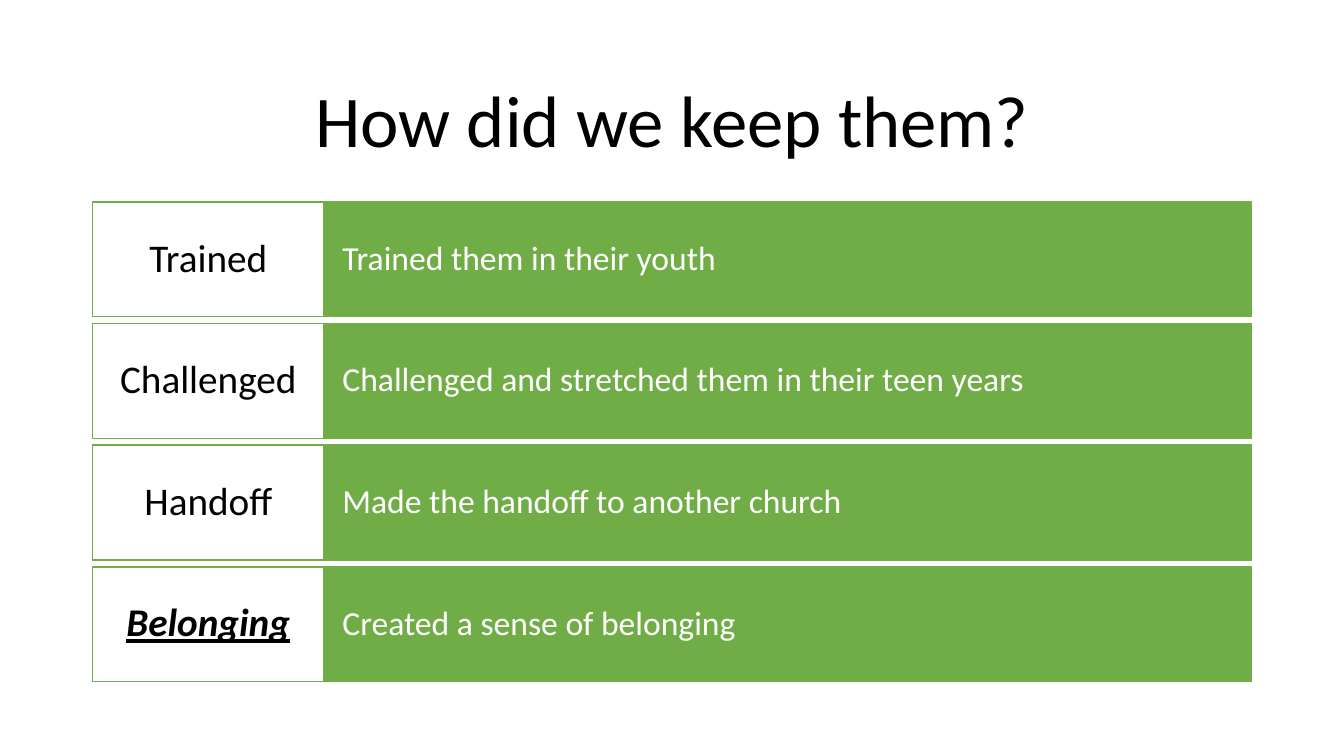
"""Build the slide on how young people were kept, as four labelled rows."""
from pptx import Presentation
from pptx.dml.color import RGBColor
from pptx.enum.shapes import MSO_SHAPE
from pptx.enum.text import MSO_ANCHOR, PP_ALIGN
from pptx.util import Pt

RECTANGLE = MSO_SHAPE.RECTANGLE
MIDDLE = MSO_ANCHOR.MIDDLE
LEFT, CENTER = PP_ALIGN.LEFT, PP_ALIGN.CENTER

TITLE = "How did we keep them?"
ROWS = [
    ("Trained", "Trained them in their youth"),
    ("Challenged", "Challenged and stretched them in their teen years"),
    ("Handoff", "Made the handoff to another church"),
    ("Belonging", "Created a sense of belonging"),
]
EMPHASIZED = "Belonging"

COLORS = {"green": "70AD47", "white": "FFFFFF", "black": "000000"}
FONT = "Calibri"
CONTENT_LEFT, CONTENT_WIDTH = 66, 828
LABEL_WIDTH = CONTENT_WIDTH / 5
ROWS_TOP, ROW_HEIGHT, ROW_PITCH = 144.2, 82, 86.9


def color(name):
    return RGBColor.from_string(COLORS[name])


def write(shape, text, size, text_color, alignment, margins):
    frame = shape.text_frame
    frame.text = text
    frame.word_wrap = True
    frame.vertical_anchor = MIDDLE
    frame.margin_left = frame.margin_right = Pt(margins[0])
    frame.margin_top = frame.margin_bottom = Pt(margins[1])
    paragraph = frame.paragraphs[0]
    paragraph.alignment = alignment
    paragraph.line_spacing = 0.9
    font = paragraph.runs[0].font
    font.name = FONT
    font.size = Pt(size)
    font.color.rgb = color(text_color)
    return font


def add_box(slide, left, top, width, fill):
    box = slide.shapes.add_shape(RECTANGLE, Pt(left), Pt(top), Pt(width), Pt(ROW_HEIGHT))
    box.shadow.inherit = False
    box.fill.solid()
    box.fill.fore_color.rgb = color(fill)
    box.line.color.rgb = color("green")
    box.line.width = Pt(1)
    return box


def main():
    presentation = Presentation()
    presentation.slide_width, presentation.slide_height = Pt(960), Pt(540)
    slide = presentation.slides.add_slide(presentation.slide_layouts[6])

    title = slide.shapes.add_textbox(Pt(CONTENT_LEFT), Pt(44), Pt(CONTENT_WIDTH), Pt(89))
    write(title, TITLE, 52, "black", CENTER, (7.2, 3.6))

    for index, (label, description) in enumerate(ROWS):
        top = ROWS_TOP + index * ROW_PITCH
        bar = add_box(slide, CONTENT_LEFT + LABEL_WIDTH, top,
                      CONTENT_WIDTH - LABEL_WIDTH, "green")
        write(bar, description, 24, "white", LEFT, (13, 20.8))
        label_box = add_box(slide, CONTENT_LEFT, top, LABEL_WIDTH, "white")
        font = write(label_box, label, 28, "black", CENTER, (8.8, 8.1))
        if label == EMPHASIZED:
            font.bold = font.italic = font.underline = True

    presentation.save("out.pptx")


if __name__ == "__main__":
    main()
